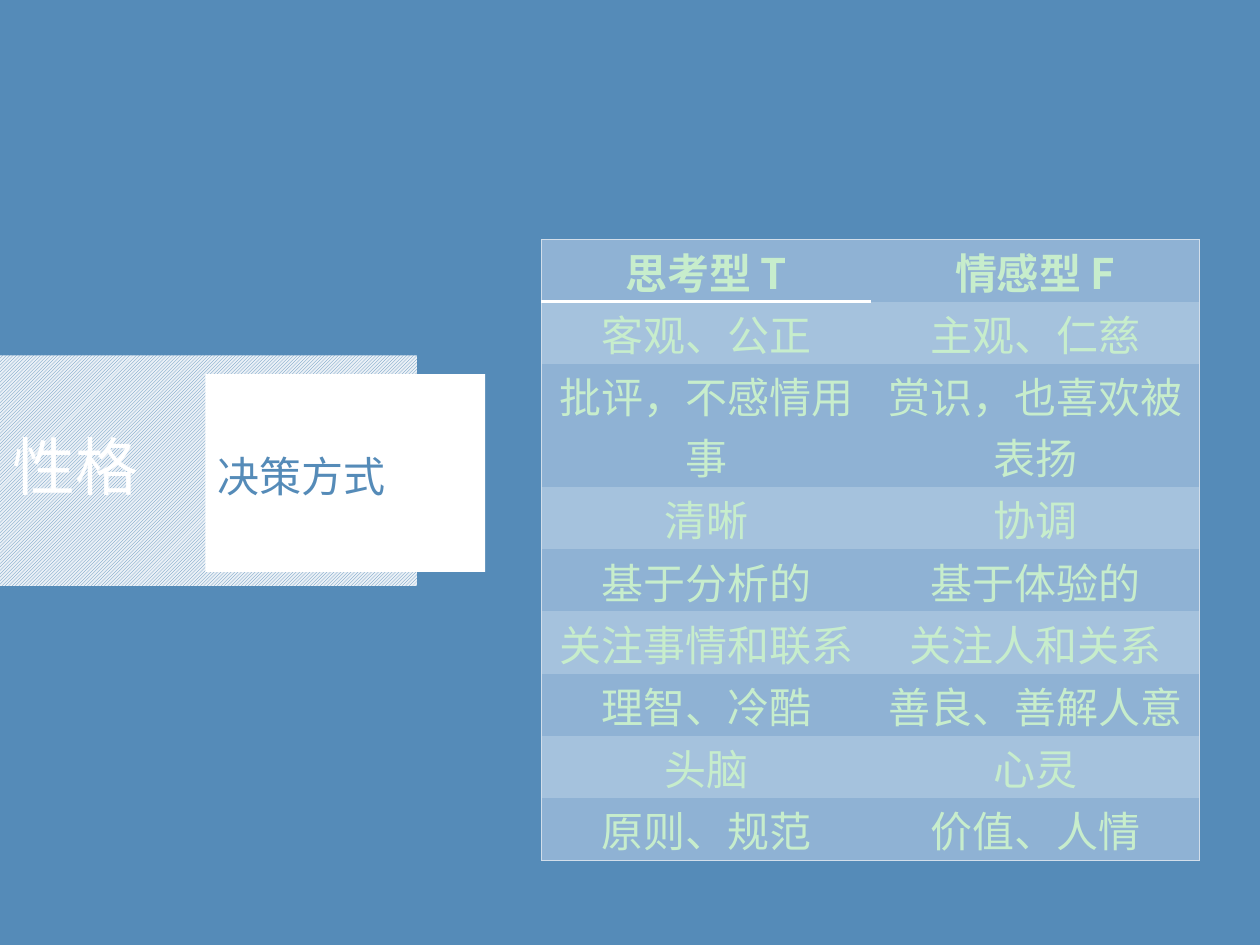
from lxml.etree import SubElement
from pptx import Presentation
from pptx.dml.color import RGBColor
from pptx.enum.dml import MSO_PATTERN_TYPE as Pattern
from pptx.enum.shapes import MSO_SHAPE as Shape
from pptx.enum.text import MSO_ANCHOR as Anchor, PP_ALIGN as Align
from pptx.oxml.ns import qn
from pptx.util import Inches, Pt

FONT = "Noto Sans CJK SC"
BLUE = RGBColor(0x55, 0x8B, 0xB8)
PALE = RGBColor(0xEA, 0xF0, 0xF6)
WHITE = RGBColor(0xFF, 0xFF, 0xFF)
GREEN = RGBColor(0xC7, 0xED, 0xCC)
EDGE = RGBColor(0xD2, 0xDE, 0xEA)
ROW = RGBColor(0x8F, 0xB2, 0xD4)
BAND = RGBColor(0xA5, 0xC2, 0xDD)
NO_STYLE = "{2D5ABB26-0587-4C30-8999-92F81FD0307C}"
TITLE = "性格"


def add_span(para, text, size, color, bold=False):
    span = para.add_run()
    span.text = text
    font = span.font
    font.name, font.size, font.bold = FONT, Pt(size), bold
    font.color.rgb = color
    SubElement(span._r.get_or_add_rPr(), qn("a:ea"), typeface=FONT)


def add_border(cell, side, color, width):
    line = SubElement(cell._tc.get_or_add_tcPr(), qn(f"a:ln{side}"), w=str(Pt(width)))
    fill = SubElement(line, qn("a:solidFill"))
    SubElement(fill, qn("a:srgbClr"), val=str(color))


deck = Presentation()
deck.slide_width, deck.slide_height = Inches(10), Inches(7.5)
page = deck.slides.add_slide(deck.slide_layouts[6])
page.background.fill.solid()
page.background.fill.fore_color.rgb = BLUE

# Hatched title panel with the white topic panel over it
panels = [
    (TITLE, 36, WHITE, (0, 2.82, 3.31, 1.83), 0.9, 0),
    ("决策方式", 24, BLUE, (1.63, 2.97, 2.22, 1.57), 1.1, 7.6),
]
for text, size, color, place, spacing, before in panels:
    box = page.shapes.add_shape(Shape.RECTANGLE, *map(Inches, place))
    box.shadow.inherit = False
    box.line.fill.background()
    if text == TITLE:
        box.fill.patterned()
        box.fill.pattern = Pattern.DARK_UPWARD_DIAGONAL
        box.fill.fore_color.rgb = BLUE
        box.fill.back_color.rgb = PALE
    else:
        box.fill.solid()
        box.fill.fore_color.rgb = WHITE
    box.text_frame.word_wrap = True
    box.text_frame.vertical_anchor = Anchor.MIDDLE
    para = box.text_frame.paragraphs[0]
    para.alignment = Align.LEFT
    para.line_spacing = spacing
    para.space_before = Pt(before)
    add_span(para, text, size, color)

# Comparison table
rows = [
    ("思考型 T", "情感型 F"),
    ("客观、公正", "主观、仁慈"),
    ("批评，不感情用事", "赏识，也喜欢被表扬"),
    ("清晰", "协调"),
    ("基于分析的", "基于体验的"),
    ("关注事情和联系", "关注人和关系"),
    ("理智、冷酷", "善良、善解人意"),
    ("头脑", "心灵"),
    ("原则、规范", "价值、人情"),
]
frame = page.shapes.add_table(len(rows), 2, Inches(4.3), Inches(1.9), Inches(5.22), Inches(4.09))
table = frame.table
table._tbl.tblPr.find(qn("a:tableStyleId")).text = NO_STYLE
for column in table.columns:
    column.width = Inches(2.61)
last = len(rows) - 1
for r, texts in enumerate(rows):
    table.rows[r].height = Inches(0.41)
    for c, text in enumerate(texts):
        cell = table.cell(r, c)
        cell.margin_left = cell.margin_right = cell.margin_top = Inches(0.01)
        cell.margin_bottom = 0
        cell.vertical_anchor = Anchor.MIDDLE
        para = cell.text_frame.paragraphs[0]
        para.alignment = Align.CENTER
        add_span(para, text, 24, GREEN, bold=r == 0)

        # Outer frame, and the rule under the first heading
        add_border(cell, "R" if c else "L", EDGE, 0.5)
        if r == 0:
            add_border(cell, "T", EDGE, 0.5)
            if c == 0:
                add_border(cell, "B", WHITE, 1.5)
        elif r == last:
            add_border(cell, "B", EDGE, 0.5)
        cell.fill.solid()
        cell.fill.fore_color.rgb = BAND if r % 2 else ROW

deck.save("out.pptx")
